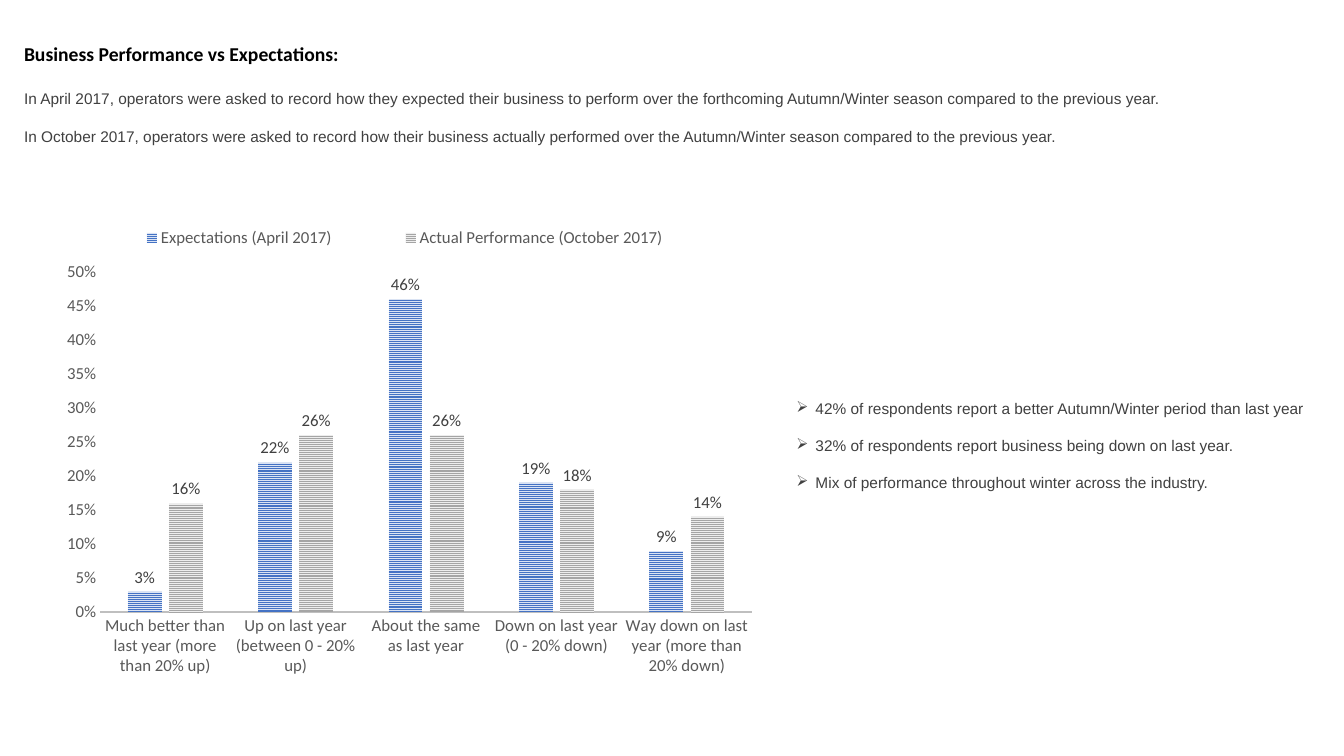
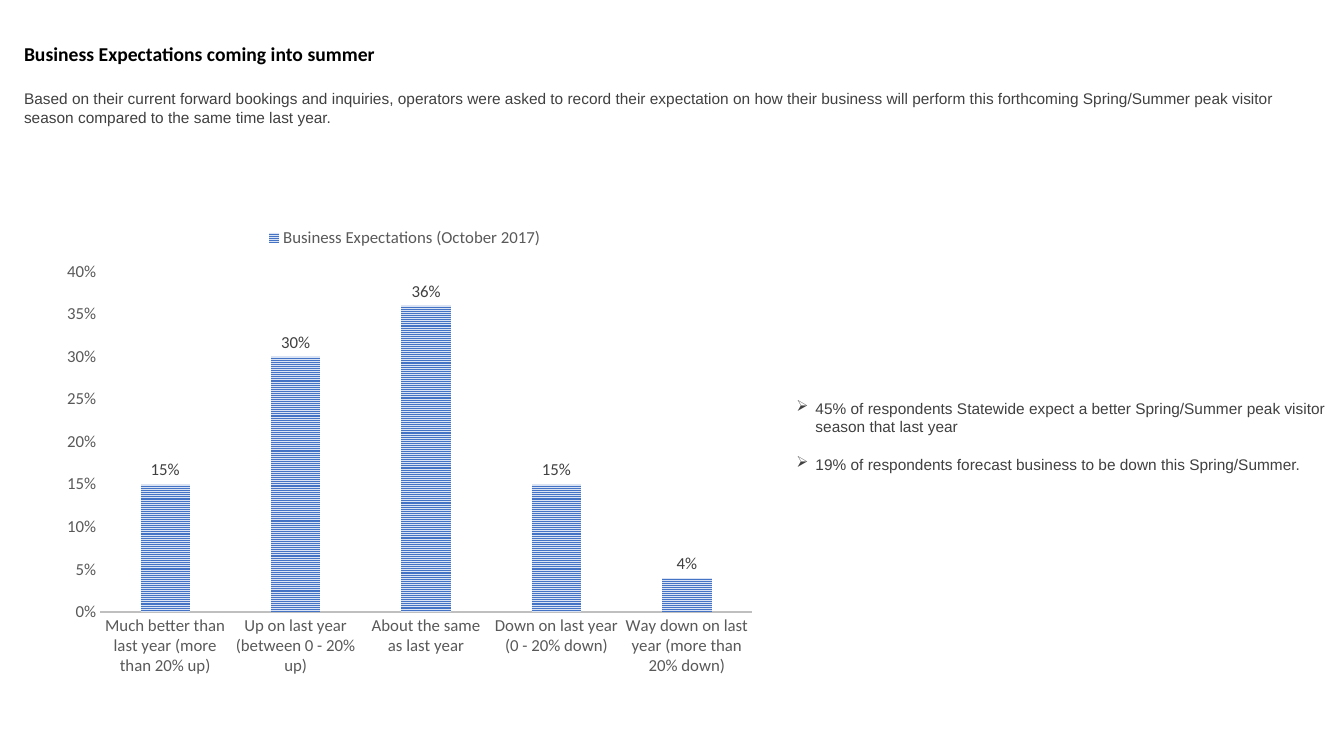
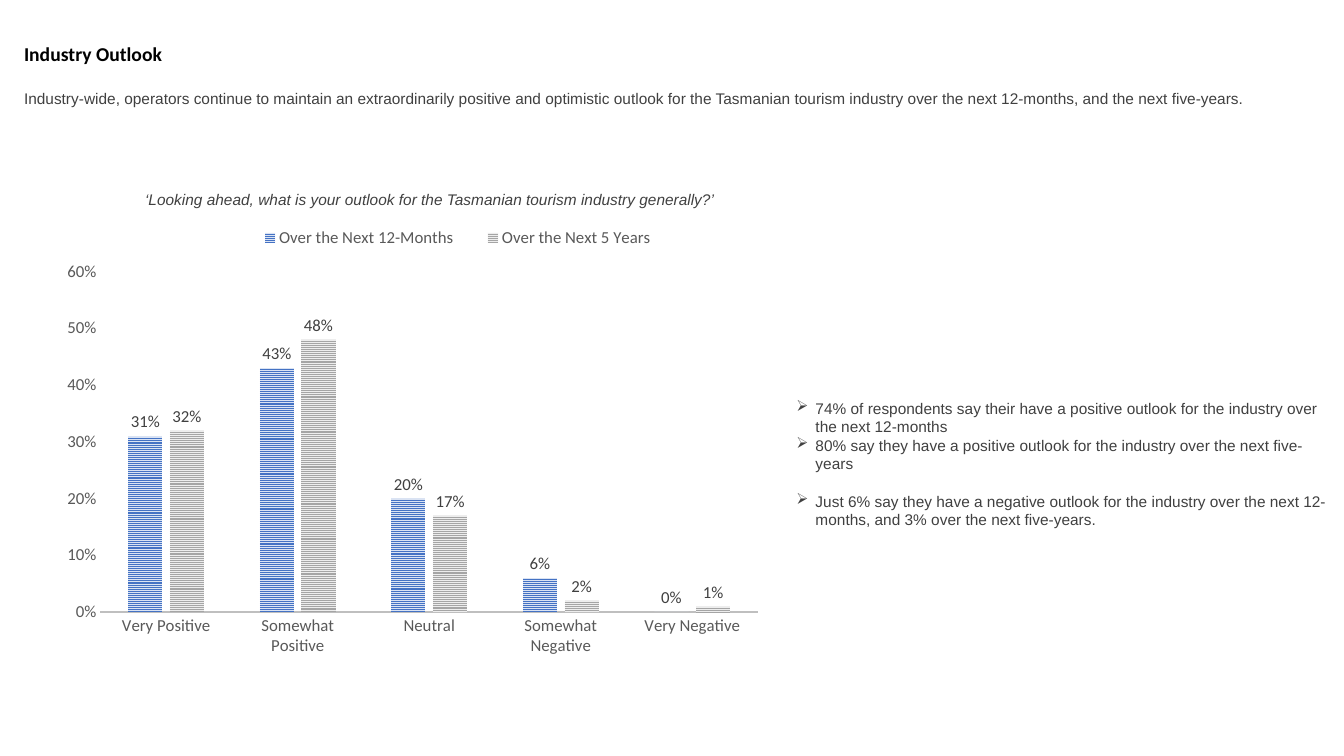
from lxml import etree
from pptx import Presentation
from pptx.chart.data import CategoryChartData
from pptx.dml.color import RGBColor
from pptx.enum.chart import (XL_CHART_TYPE, XL_LABEL_POSITION,
                             XL_LEGEND_POSITION, XL_TICK_MARK)
from pptx.enum.dml import MSO_PATTERN
from pptx.enum.text import MSO_AUTO_SIZE
from pptx.oxml import parse_xml
from pptx.oxml.ns import nsdecls, qn
from pptx.util import Inches, Pt

COLUMN = XL_CHART_TYPE.COLUMN_CLUSTERED
OUTSIDE = XL_LABEL_POSITION.OUTSIDE_END
TOP = XL_LEGEND_POSITION.TOP
NO_TICK = XL_TICK_MARK.NONE
STRIPES = MSO_PATTERN.NARROW_HORIZONTAL
GROW = MSO_AUTO_SIZE.SHAPE_TO_FIT_TEXT

BLACK, DARK, GREY, RULE = "000000", "404040", "595959", "BFBFBF"
BARS = [("4472C4", "DAE3F3"), ("A5A5A5", "EDEDED")]
HEAD, BODY = "Calibri", "Arial"
LINE_GAP = 13.4
INDENT = Inches(0.19)
PLOT = (0.07, 0.17, 0.92, 0.61)

CHANGES = [
    "Much better than last year (more than 20% up)",
    "Up on last year (between 0 - 20% up)",
    "About the same as last year",
    "Down on last year (0 - 20% down)",
    "Way down on last year (more than 20% down)",
]
OUTLOOKS = ["Very Positive", "Somewhat Positive", "Neutral",
            "Somewhat Negative", "Very Negative"]


def rgb(code):
    return RGBColor.from_string(code)


def style(font, size, color, name=HEAD, bold=False, italic=False):
    font.size, font.name = Pt(size), name
    font.bold, font.italic = bold, italic
    font.color.rgb = rgb(color)


def add_box(slide, left, top, width, height):
    frame = slide.shapes.add_textbox(
        Inches(left), Inches(top), Inches(width), Inches(height)).text_frame
    frame.word_wrap = True
    frame.auto_size = GROW
    return frame


def add_para(frame, text, gap=0):
    """Fill the empty first paragraph, or append one after a gap in points."""
    para = frame.paragraphs[0]
    if para.runs:
        para = frame.add_paragraph()
        para.space_before = Pt(gap)
    para.text = text
    return para


def add_intro(slide, title, lines, height):
    frame = add_box(slide, 0.14, 0.37, 12.97, height)
    style(add_para(frame, title).font, 14, BLACK, bold=True)
    for i, line in enumerate(lines):
        para = add_para(frame, line, LINE_GAP if i else 17)
        style(para.font, 11, DARK, BODY)


def add_points(slide, groups, height):
    """Bullets; only the first one of each group stands off from the last."""
    frame = add_box(slide, 7.8, 3.91, 5.53, height)
    for group in groups:
        for i, text in enumerate(group):
            para = add_para(frame, text, 0 if i else LINE_GAP)
            style(para.font, 11, DARK, BODY)
            props = para._p.get_or_add_pPr()
            props.set("marL", str(INDENT))
            props.set("indent", str(-INDENT))
            bullet = etree.Element(qn("a:buChar"), char="➢")
            props.find(qn("a:defRPr")).addprevious(bullet)


def set_layout(owner, place, inner=False):
    """Fix a chart part at x, y, width, height as shares of the chart."""
    old = owner.find(qn("c:layout"))
    if old is not None:
        owner.remove(old)
    target = '<c:layoutTarget val="inner"/>' if inner else ""
    modes = "".join(f'<c:{k}Mode val="edge"/>' for k in "xy")
    sizes = "".join(f'<c:{k} val="{v}"/>' for k, v in zip("xywh", place))
    layout = parse_xml(f'<c:layout {nsdecls("c")}><c:manualLayout>{target}'
                       f'{modes}{sizes}</c:manualLayout></c:layout>')
    if inner:
        owner.insert(0, layout)
    else:
        owner.find(qn("c:legendPos")).addnext(layout)


def add_bars(slide, cats, series, top, step, key, width=7.03):
    data = CategoryChartData(number_format="0%")
    data.categories = cats
    for name, vals in series:
        data.add_series(name, vals)
    chart = slide.shapes.add_chart(
        COLUMN, Inches(0.5), Inches(1.75), Inches(width), Inches(5.54),
        data).chart
    style(chart.font, 10, BLACK)
    chart.has_title = False
    chart.has_legend = True
    chart.legend.position = TOP
    chart.legend.include_in_layout = False
    style(chart.legend.font, 12, GREY)
    set_layout(chart.legend._element, key)

    plot = chart.plots[0]
    plot.gap_width, plot.overlap = 164, -22
    plot.vary_by_categories = False
    set_layout(chart._chartSpace.chart.plotArea, PLOT, inner=True)
    for bars, (fore, back) in zip(plot.series, BARS):
        fill = bars.format.fill
        fill.patterned()
        fill.pattern = STRIPES
        fill.fore_color.rgb, fill.back_color.rgb = rgb(fore), rgb(back)
        bars.invert_if_negative = False
        labels = bars.data_labels
        labels.show_value = True
        labels.position = OUTSIDE
        labels.number_format, labels.number_format_is_linked = "0%", False
        style(labels.font, 12, DARK)

    across, up = chart.category_axis, chart.value_axis
    for axis in (across, up):
        axis.has_major_gridlines = False
        axis.major_tick_mark = axis.minor_tick_mark = NO_TICK
        style(axis.tick_labels.font, 12, GREY)
    across.format.line.color.rgb = rgb(RULE)
    across.format.line.width = Pt(1.5)
    up.format.line.fill.background()
    up.minimum_scale, up.maximum_scale, up.major_unit = 0, top, step
    up.tick_labels.number_format = "0%"
    up.tick_labels.number_format_is_linked = False


def main():
    deck = Presentation()
    deck.slide_width, deck.slide_height = Inches(13.33), Inches(7.5)
    past, summer, outlook = [
        deck.slides.add_slide(deck.slide_layouts[6]) for _ in range(3)]

    add_intro(past, "Business Performance vs Expectations:", [
        "In April 2017, operators were asked to record how they expected "
        "their business to perform over the forthcoming Autumn/Winter season "
        "compared to the previous year.",
        "In October 2017, operators were asked to record how their business "
        "actually performed over the Autumn/Winter season compared to the "
        "previous year.",
    ], 1.13)
    add_bars(past, CHANGES, [
        ("Expectations (April 2017)", [0.03, 0.22, 0.46, 0.19, 0.09]),
        ("Actual Performance (October 2017)", [0.16, 0.26, 0.26, 0.18, 0.14]),
    ], 0.5, 0.05, (0.04, 0.08, 0.92, 0.06))
    add_points(past, [
        ["42% of respondents report a better Autumn/Winter period than last "
         "year"],
        ["32% of respondents report business being down on last year."],
        ["Mix of performance throughout winter across the industry."],
    ], 1.21)

    add_intro(summer, "Business Expectations coming into summer", [
        "Based on their current forward bookings and inquiries, operators "
        "were asked to record their expectation on how their business will "
        "perform this forthcoming Spring/Summer peak visitor season compared "
        "to the same time last year.",
    ], 0.94)
    add_bars(summer, CHANGES, [
        ("Business Expectations (October 2017)",
         [0.15, 0.3, 0.36, 0.15, 0.04]),
    ], 0.4, 0.05, (0.04, 0.08, 0.92, 0.06))
    add_points(summer, [
        ["45% of respondents Statewide expect a better Spring/Summer peak "
         "visitor season that last year"],
        ["19% of respondents forecast business to be down this "
         "Spring/Summer."],
    ], 1.03)

    add_intro(outlook, "Industry Outlook", [
        "Industry-wide, operators continue to maintain an extraordinarily "
        "positive and optimistic outlook for the Tasmanian tourism industry "
        "over the next 12-months, and the next five-years.",
    ], 0.76)
    add_bars(outlook, OUTLOOKS, [
        ("Over the Next 12-Months", [0.31, 0.43, 0.2, 0.06, 0]),
        ("Over the Next 5 Years", [0.32, 0.48, 0.17, 0.02, 0.01]),
    ], 0.6, 0.1, (0.26, 0.08, 0.62, 0.06), 7.09)
    quote = add_para(
        add_box(outlook, 1.34, 1.84, 6.25, 0.28),
        "‘Looking ahead, what is your outlook for the Tasmanian tourism "
        "industry generally?’")
    style(quote.font, 11, DARK, BODY, italic=True)
    add_points(outlook, [
        ["74% of respondents say their have a positive outlook for the "
         "industry over the next 12-months",
         "80% say they have a positive outlook for the industry over the "
         "next five-years"],
        ["Just 6% say they have a negative outlook for the industry over the "
         "next 12-months, and 3% over the next five-years."],
    ], 1.4)

    deck.save("out.pptx")


if __name__ == "__main__":
    main()
